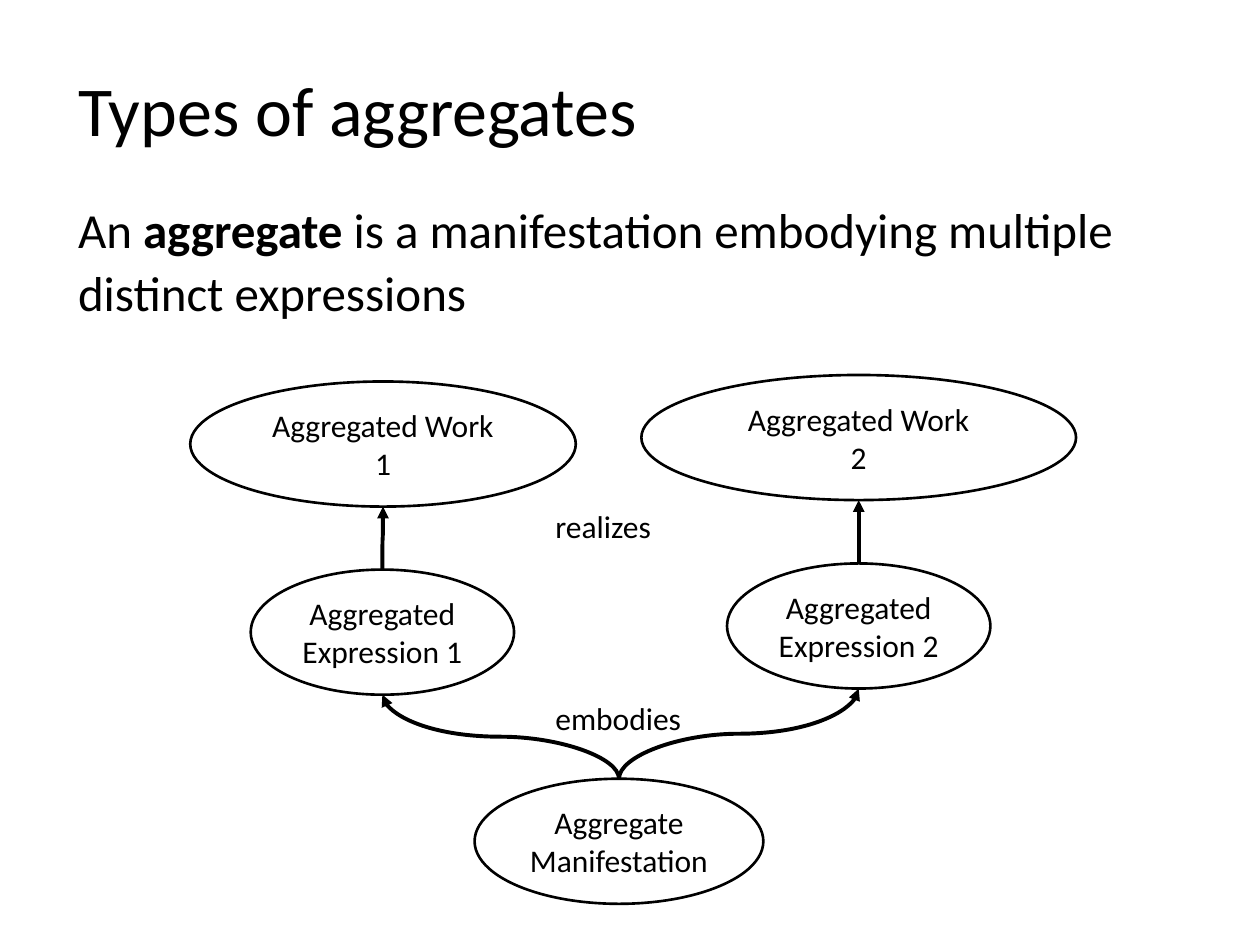
from pptx import Presentation
from pptx.dml.color import RGBColor
from pptx.enum.shapes import MSO_CONNECTOR, MSO_SHAPE
from pptx.enum.text import MSO_ANCHOR, MSO_AUTO_SIZE, PP_ALIGN
from pptx.oxml.ns import qn
from pptx.util import Pt
from lxml.etree import SubElement

# Content: lengths in points
INK = "000000"
BODY_FORMAT = {"line_spacing": 1.07, "space_after": Pt(8)}
# runs (text, bold), box, size, wrap, paragraph format
TEXTS = [
    ([("Types of aggregates", False)], (37.5, 34.5, 337, 55.5), 40, False, {}),
    ([("An ", False), ("aggregate", True),
      (" is a manifestation embodying multiple distinct expressions", False)],
     (37.5, 108, 605.5, 80), 28, True, BODY_FORMAT),
    ([("realizes", False)], (310.3, 286, 74, 29), 18, True, {}),
    ([("embodies", False)], (310.3, 395.6, 94, 29), 18, True, {}),
]
# lines, centre x, top, width, wrap
ENTITIES = {
    "manifestation": (["Aggregate", "Manifestation"], 353.7, 445, 165, False),
    "expression 1": (["Aggregated", "Expression 1"], 218.5, 325.5, 150.5, False),
    "work 1": (["Aggregated Work", "1"], 218.9, 218, 220.3, True),
    "expression 2": (["Aggregated", "Expression 2"], 490.7, 322, 150.5, False),
    "work 2": (["Aggregated Work", "2"], 490.7, 214.3, 248.4, True),
}
ENTITY_HEIGHT = 71.5
RELATIONS = [
    ("expression 1", "work 1"),
    ("expression 2", "work 2"),
    ("manifestation", "expression 1"),
    ("manifestation", "expression 2"),
]


def color(value):
    return RGBColor.from_string(value)


def apply(target, values):
    for key, value in values.items():
        setattr(target, key, value)


def write(frame, paragraphs, size, wrap, paragraph_format):
    apply(frame, {"word_wrap": wrap, "auto_size": MSO_AUTO_SIZE.SHAPE_TO_FIT_TEXT})
    for index, runs in enumerate(paragraphs):
        paragraph = frame.add_paragraph() if index else frame.paragraphs[0]
        apply(paragraph, paragraph_format)
        for text, bold in runs:
            run = paragraph.add_run()
            run.text = text
            apply(run.font, {"name": "Calibri", "size": Pt(size), "bold": bold})
            run.font.color.rgb = color(INK)


def draw_line(line, width):
    line.color.rgb = color(INK)
    line.width = Pt(width)


def add_entity(shapes, lines, center, top, width, wrap):
    ellipse = shapes.add_shape(MSO_SHAPE.OVAL, Pt(center - width / 2), Pt(top),
                               Pt(width), Pt(ENTITY_HEIGHT))
    ellipse.shadow.inherit = False
    ellipse.fill.background()
    draw_line(ellipse.line, 1.5)
    ellipse.text_frame.vertical_anchor = MSO_ANCHOR.MIDDLE
    write(ellipse.text_frame, [[(text, False)] for text in lines], 18, wrap,
          {"alignment": PP_ALIGN.CENTER})


def add_relation(shapes, source, target):
    """Curve from the top of source to the bottom of target."""
    _, x1, y1, _, _ = ENTITIES[source]
    _, x2, target_top, _, _ = ENTITIES[target]
    y2 = target_top + ENTITY_HEIGHT
    mid_x, mid_y = (x1 + x2) / 2, (y1 + y2) / 2
    rise, run = (y1 - y2) / 2, (x2 - x1) / 2
    # Laid out left to right, then turned to point upwards
    arrow = shapes.add_connector(MSO_CONNECTOR.CURVE, Pt(mid_x - rise), Pt(mid_y - run),
                                 Pt(mid_x + rise), Pt(mid_y + run))
    draw_line(arrow.line, 2.25)
    properties = arrow._element.spPr
    properties.find(qn("a:xfrm")).set("rot", str(270 * 60000))
    SubElement(properties.find(qn("a:ln")), qn("a:tailEnd"), type="triangle")
    SubElement(properties, qn("a:effectLst"))


def main():
    deck = Presentation()
    deck.slide_width, deck.slide_height = Pt(720), Pt(540)
    shapes = deck.slides.add_slide(deck.slide_layouts[6]).shapes

    # Heading, definition and relation labels
    for runs, box, size, wrap, paragraph_format in TEXTS:
        label = shapes.add_textbox(*map(Pt, box))
        write(label.text_frame, [runs], size, wrap, paragraph_format)

    # Diagram
    for entity in ENTITIES.values():
        add_entity(shapes, *entity)
    for relation in RELATIONS:
        add_relation(shapes, *relation)

    deck.save("out.pptx")


if __name__ == "__main__":
    main()
